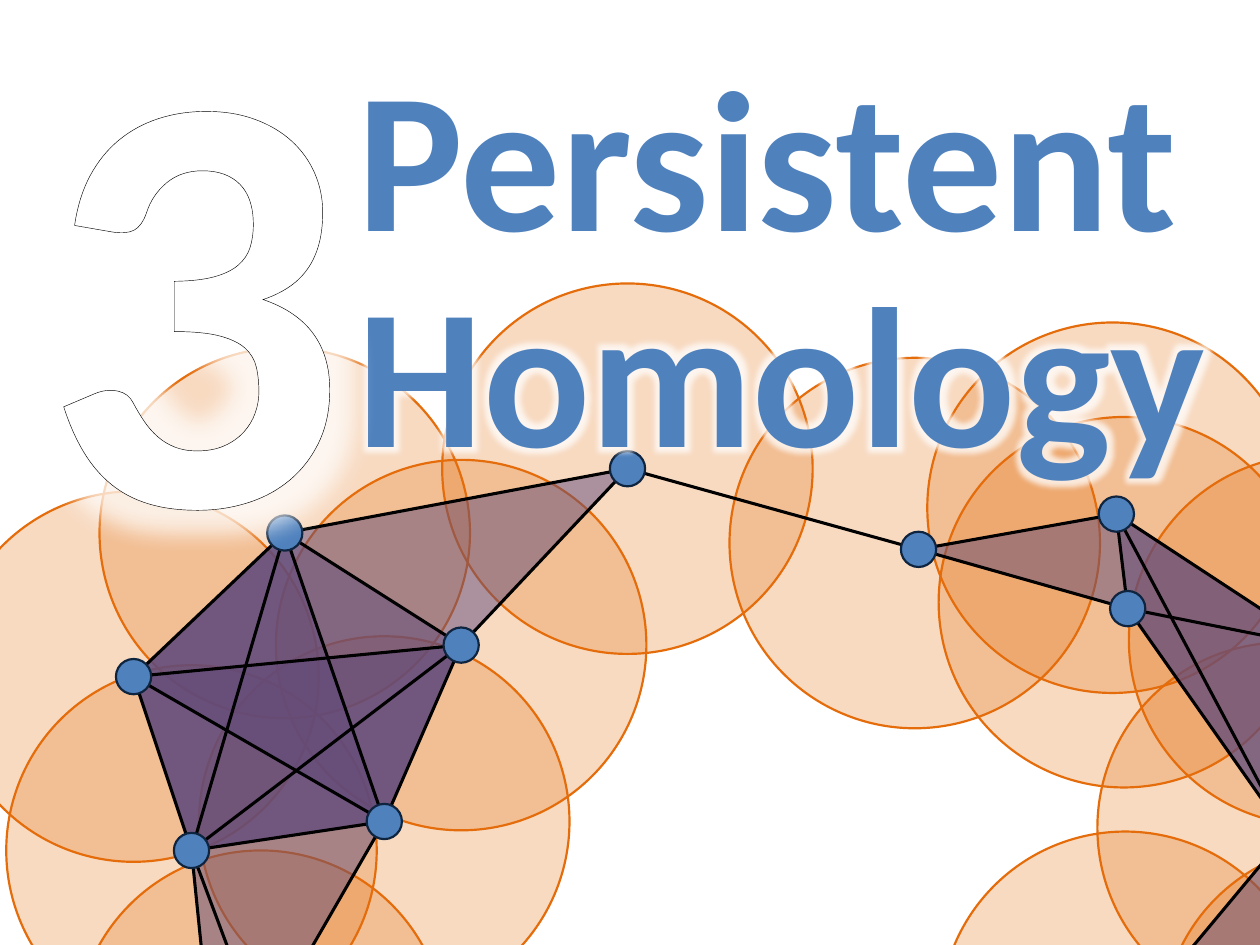
from lxml import etree
from pptx import Presentation
from pptx.dml.color import RGBColor
from pptx.enum.shapes import MSO_CONNECTOR, MSO_SHAPE
from pptx.enum.text import MSO_ANCHOR, MSO_AUTO_SIZE, PP_ALIGN
from pptx.oxml import parse_xml
from pptx.oxml.ns import qn
from pptx.util import Inches, Pt

OVAL = MSO_SHAPE.OVAL
STRAIGHT = MSO_CONNECTOR.STRAIGHT
TOP = MSO_ANCHOR.TOP
LEFT = PP_ALIGN.LEFT
NO_FIT = MSO_AUTO_SIZE.NONE
TITLE_ONLY = 5
NS = 'xmlns:a="http://schemas.openxmlformats.org/drawingml/2006/main"'

COLORS = {
    "disc": "E46C0A", "face": "604A7B", "edge": "000000",
    "node": "4F81BD", "rim": "0F243E", "white": "FFFFFF",
}
FONT = "Calibri"
DISC_SIZE, NODE_SIZE = 2.94, 0.28
RIGHT_SHIFT = (-0.03, -0.05)  # discs of the right cluster sit off their points

POINTS = {
    "A": (1.06, 5.37), "B": (2.26, 4.23), "C": (3.66, 5.12),
    "D": (3.05, 6.52), "E": (1.52, 6.75), "F": (4.98, 3.72),
    "G": (7.29, 4.36), "H": (8.86, 4.08), "I": (8.95, 4.83),
    "J": (10.46, 5.13), "K": (10.21, 6.62), "L": (2.07, 8.22),
    "M": (1.78, 9.31), "N": (8.96, 8.12), "P": (10.72, 8.22),
}
DISCS = "JKIHGFDEALBCNP"
FACES = ("KIHJ CBF DEAC DABC DEAB MEL DABC DEA "
         "KIJ LED PNK JIH IGH").split()
EDGES = ("KH BF CE BE CA EM BD FG DA KI KN LD "
         "JH FC IG BC BA HG ED EL DC JI AE IH").split()
NODES = "ACFGHEIDB"


def rgb(name):
    return RGBColor.from_string(COLORS[name])


def paint(shape, name, alpha=100):
    """Fill a shape, with alpha as percent opacity, and drop its shadow."""
    shape.shadow.inherit = False
    shape.fill.solid()
    shape.fill.fore_color.rgb = rgb(name)
    if alpha < 100:
        tint = shape._element.spPr.find(qn("a:solidFill"))[0]
        etree.SubElement(tint, qn("a:alpha"), val=str(alpha * 1000))


def add_circle(slide, center, size, fill, line, alpha=100):
    x, y = (Inches(c - size / 2) for c in center)
    circle = slide.shapes.add_shape(OVAL, x, y, Inches(size), Inches(size))
    paint(circle, fill, alpha)
    circle.line.color.rgb = rgb(line)
    circle.line.width = Pt(1.25)


def add_disc(slide, key):
    x, y = POINTS[key]
    dx, dy = RIGHT_SHIFT if x > 7 else (0, 0)
    add_circle(slide, (x + dx, y + dy), DISC_SIZE, "disc", "disc", 25)


def add_face(slide, keys):
    start, *rest = [tuple(Inches(c) for c in POINTS[k]) for k in keys]
    pen = slide.shapes.build_freeform(*start)
    pen.add_line_segments(rest, close=True)
    face = pen.convert_to_shape()
    paint(face, "face", 50)
    face.line.fill.background()


def add_edge(slide, keys):
    ends = [Inches(c) for k in keys for c in POINTS[k]]
    edge = slide.shapes.add_connector(STRAIGHT, *ends)
    edge.line.color.rgb = rgb("edge")
    edge.line.width = Pt(1.75)
    etree.SubElement(edge._element.spPr, qn("a:effectLst"))


def write(shape, text, size, color, wrap, glow):
    """Put one bold, left-set run with a white glow into a shape."""
    frame = shape.text_frame
    frame.auto_size = NO_FIT
    frame.word_wrap = wrap
    frame.vertical_anchor = TOP
    para = frame.paragraphs[0]
    para.alignment = LEFT
    run = para.add_run()
    run.text = text
    font = run.font
    font.name, font.size, font.bold = FONT, Pt(size), True
    font.color.rgb = rgb(color)
    halo = parse_xml(
        f'<a:effectLst {NS}><a:glow rad="{Pt(glow)}">'
        f'<a:srgbClr val="{COLORS["white"]}"><a:alpha val="75000"/>'
        '</a:srgbClr></a:glow></a:effectLst>')
    run._r.rPr.find(qn("a:solidFill")).addnext(halo)
    return para


def outline(para, color, width):
    line = parse_xml(
        f'<a:ln {NS} w="{Pt(width)}"><a:solidFill>'
        f'<a:srgbClr val="{COLORS[color]}"/></a:solidFill></a:ln>')
    para.runs[0]._r.rPr.insert(0, line)


def place(shape, x, y, width, height):
    shape.left, shape.top = Inches(x), Inches(y)
    shape.width, shape.height = Inches(width), Inches(height)


def add_title(slide):
    title = slide.shapes.title
    place(title, 2.74, 0.42, 7.43, 4.17)
    para = write(title, "Persistent Homology", 114, "node", True, 8)
    para.line_spacing = 0.9
    slide.shapes._spTree.append(title._element)  # bring to front


def add_number(slide):
    box = slide.shapes.add_textbox(
        Inches(0.23), Inches(-0.81), Inches(2.65), Inches(5.89))
    para = write(box, "3", 344, "white", False, 18)
    outline(para, "edge", 3.25)


def main():
    deck = Presentation()
    deck.slide_width, deck.slide_height = Inches(10), Inches(7.5)
    slide = deck.slides.add_slide(deck.slide_layouts[TITLE_ONLY])
    for key in DISCS:
        add_disc(slide, key)
    for keys in FACES:
        add_face(slide, keys)
    for keys in EDGES:
        add_edge(slide, keys)
    for key in NODES:
        add_circle(slide, POINTS[key], NODE_SIZE, "node", "rim")
    add_title(slide)
    add_number(slide)
    deck.save("out.pptx")


if __name__ == "__main__":
    main()
